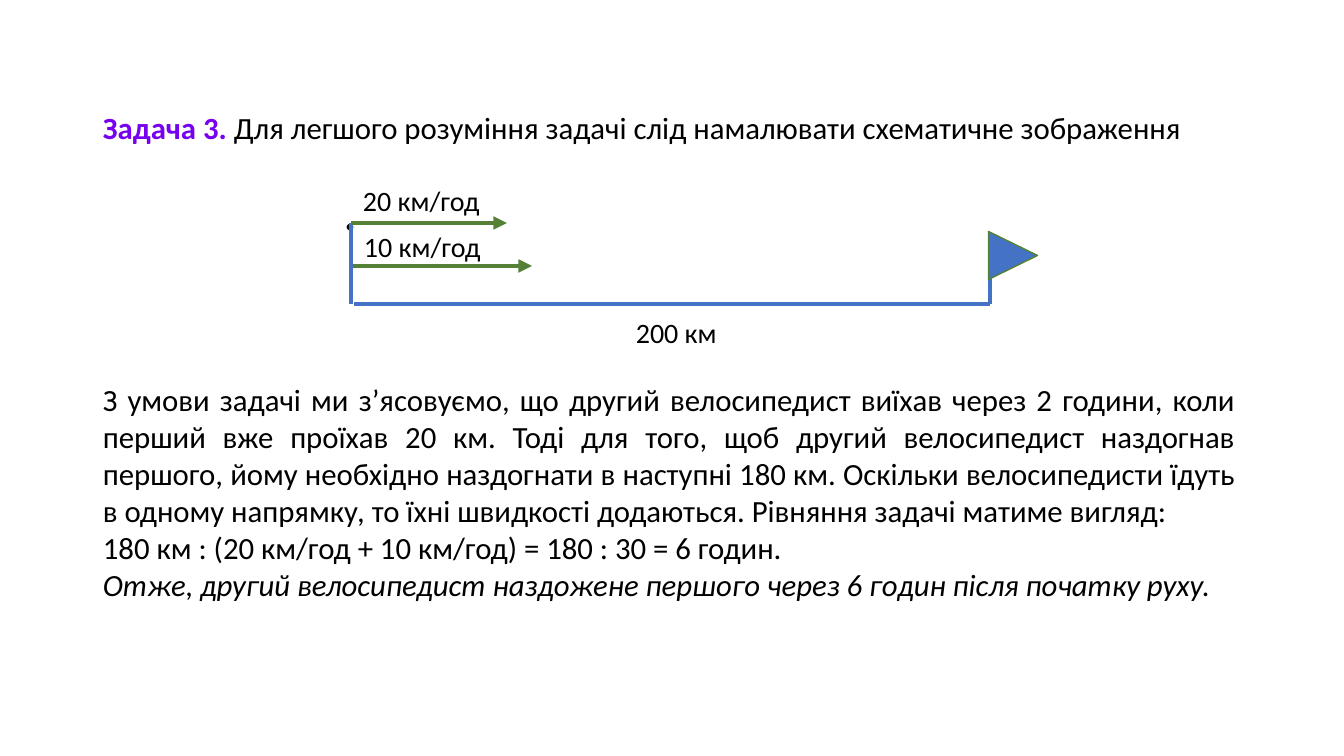
import pptx
import pptx.dml.color
import pptx.enum.shapes
import pptx.enum.text
import pptx.oxml
import pptx.oxml.ns
import pptx.util

PX = 914400 / 100.8
BLUE, GREEN, VIOLET, BLACK = "4472C4", "548135", "7700EE", "000000"


def px(length):
    """Turn pixels into EMU."""
    return pptx.util.Emu(round(length * PX))


def rgb(code):
    """Turn a hex string into a colour."""
    return pptx.dml.color.RGBColor.from_string(code)


def set_font(font, size, color=BLACK):
    """Give a font its face, size and colour."""
    font.name = "Calibri"
    font.size = pptx.util.Pt(size)
    font.color.rgb = rgb(color)


def add_text(slide, box, lines, size, align=None, spacing=None, wrap=True):
    """Add a text box with one paragraph per line and return its frame."""
    frame = slide.shapes.add_textbox(*map(px, box)).text_frame
    frame.word_wrap = wrap
    for index, line in enumerate(lines):
        paragraph = frame.add_paragraph() if index else frame.paragraphs[0]
        paragraph.text = line
        paragraph.alignment = align
        paragraph.line_spacing = spacing
        set_font(paragraph.font, size)
    return frame


def add_line(slide, start, end, color, width=3.25, arrow=False):
    """Draw a straight line, with an arrowhead at its end if asked."""
    line = slide.shapes.add_connector(
        pptx.enum.shapes.MSO_CONNECTOR.STRAIGHT, *map(px, start + end))
    line.line.color.rgb = rgb(color)
    line.line.width = pptx.util.Pt(width)
    if arrow:
        head = pptx.oxml.parse_xml(
            f'<a:tailEnd {pptx.oxml.ns.nsdecls("a")} type="triangle"/>')
        line.line._get_or_add_ln().append(head)
    effects = pptx.oxml.parse_xml(f'<a:effectLst {pptx.oxml.ns.nsdecls("a")}/>')
    line._element.spPr.append(effects)


def add_flag(slide, box):
    """Draw the finish flag as a triangle pointing right."""
    flag = slide.shapes.add_shape(
        pptx.enum.shapes.MSO_SHAPE.ISOSCELES_TRIANGLE, *map(px, box))
    flag.rotation = 90
    flag.shadow.inherit = False
    flag.fill.solid()
    flag.fill.fore_color.rgb = rgb(BLUE)
    flag.line.color.rgb = rgb(GREEN)
    flag.line.width = pptx.util.Pt(1)


def add_heading(slide, box):
    """Write the task number in bold violet and the advice after it."""
    frame = add_text(slide, box, [""], 22, spacing=0.9)
    heading = frame.paragraphs[0]
    number = heading.add_run()
    number.text = "Задача 3. "
    number.font.bold = True
    number.font.color.rgb = rgb(VIOLET)
    advice = heading.add_run()
    advice.text = "Для легшого розуміння задачі слід намалювати схематичне зображення"


def add_scheme(slide):
    """Draw the road, both speeds and the flag."""
    start, finish, top, road = 351, 990, 223, 304
    add_line(slide, (354, road), (finish, road), BLUE)
    add_line(slide, (start, top), (start, road), BLUE, 3)
    add_line(slide, (finish, 256), (finish, road), BLUE)
    add_line(slide, (353, 266), (532, 266), GREEN, arrow=True)
    add_line(slide, (start, top), (507, top), GREEN, arrow=True)
    add_flag(slide, (989, 231, 48, 49))
    for left, label_top, width, label in (
            (354, 225, 138, "10 км/год"),
            (626, 311, 102, "200 км"),
            (353, 179, 148, "20 км/год")):
        add_text(slide, (left, label_top, width, 44), [label], 20, wrap=False)


def main():
    """Build the slide and save it."""
    deck = pptx.Presentation()
    deck.slide_width, deck.slide_height = px(1344), px(756)
    slide = deck.slides.add_slide(deck.slide_layouts[6])
    point = add_text(slide, (339, 195, 14, 35), ["."], 39.6, spacing=0.9)
    point.vertical_anchor = pptx.enum.text.MSO_ANCHOR.MIDDLE
    add_heading(slide, (93, 108, 1152, 573))
    add_scheme(slide)
    solution = add_text(slide, (93, 376, 1152, 234), [
        "З умови задачі ми з’ясовуємо, що другий велосипедист виїхав через 2 години, "
        "коли перший вже проїхав 20 км. Тоді для того, щоб другий велосипедист "
        "наздогнав першого, йому необхідно наздогнати в наступні 180 км. Оскільки "
        "велосипедисти їдуть в одному напрямку, то їхні швидкості додаються. "
        "Рівняння задачі матиме вигляд:",
        "180 км : (20 км/год + 10 км/год) = 180 : 30 = 6 годин.",
        "Отже, другий велосипедист наздожене першого через 6 годин після початку руху.",
    ], 22, align=pptx.enum.text.PP_ALIGN.JUSTIFY)
    solution.paragraphs[-1].font.italic = True
    deck.save("out.pptx")


if __name__ == "__main__":
    main()
